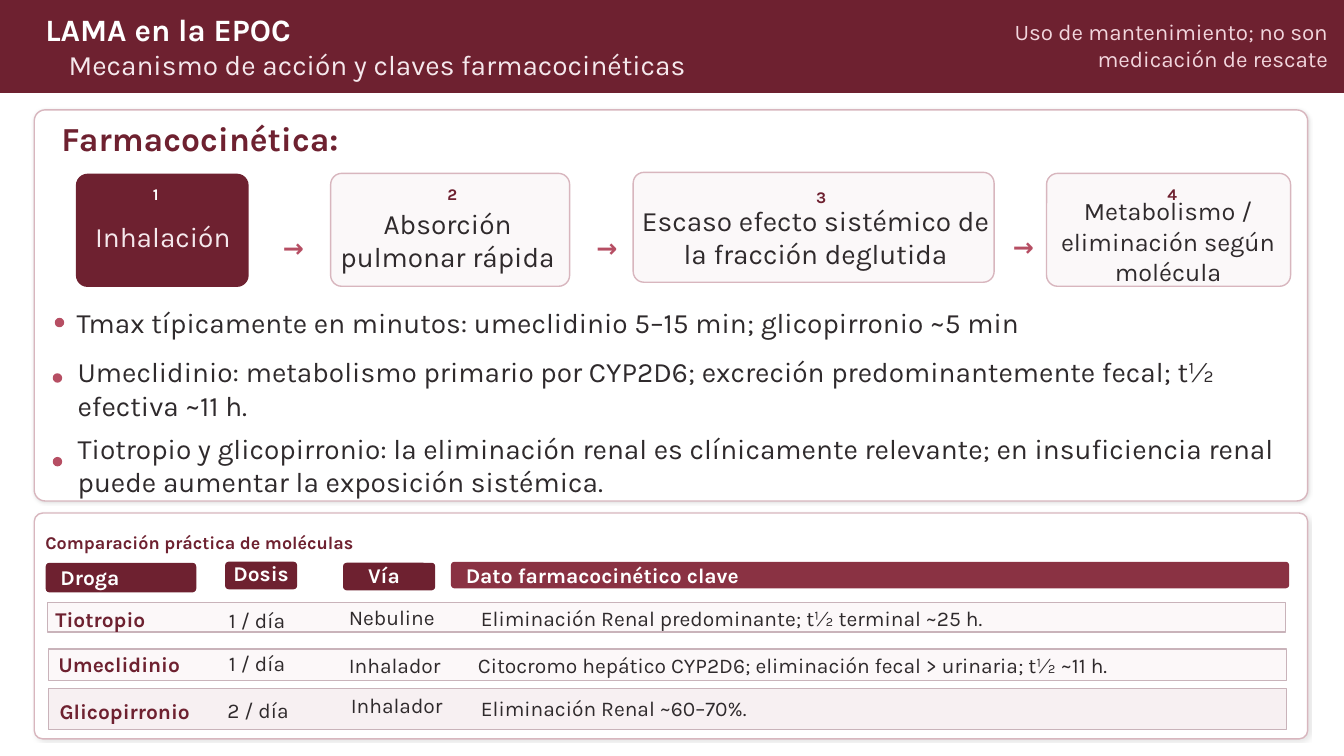
from dataclasses import dataclass
from typing import NamedTuple

from lxml.etree import SubElement
from pptx import Presentation
from pptx.dml.color import RGBColor
from pptx.enum.shapes import MSO_SHAPE
from pptx.enum.text import MSO_ANCHOR, PP_ALIGN
from pptx.oxml.ns import qn
from pptx.util import Inches, Pt

COLUMNS, ROWS = 133.3, 75
SLIDE_W, SLIDE_H = Inches(13.33), Inches(7.5)


@dataclass(frozen=True)
class Theme:
    font: str = "Karla"
    wine: str = "6E2130"
    wine_light: str = "8A3243"
    accent: str = "B64E63"
    border: str = "D8B6BE"
    row_border: str = "C9B3BA"
    white: str = "FFFFFF"
    pale: str = "F5E8EC"
    note: str = "F2D6DD"
    step: str = "FBF8F9"
    row: str = "FCF8F9"
    row_alt: str = "F7F0F2"
    ink: str = "2F2A2C"
    title: float = 22.2
    heading: float = 24
    body: float = 20
    compact: float = 18
    aside: float = 16
    cell: float = 15
    caption: float = 12.8
    number: float = 11.6


class Box(NamedTuple):
    x: float
    y: float
    w: float
    h: float


class Step(NamedTuple):
    card: Box
    number: Box
    label: Box
    lines: list[str]
    size: float
    fill: str
    border: str
    number_color: str
    label_color: str


class Bullet(NamedTuple):
    dot_x: float
    dot_y: float
    area: Box
    text: str


class Header(NamedTuple):
    bar: Box
    area: Box
    text: str
    fill: str
    align: PP_ALIGN


class Molecule(NamedTuple):
    bar: Box
    fill: str
    texts: list[str]
    areas: list[Box]


T = Theme()
LEFT, CENTER, RIGHT = PP_ALIGN.LEFT, PP_ALIGN.CENTER, PP_ALIGN.RIGHT


def place(box: Box) -> tuple[int, int, int, int]:
    col, row = SLIDE_W / COLUMNS, SLIDE_H / ROWS
    return round(box.x * col), round(box.y * row), round(box.w * col), round(box.h * row)


def add_block(s, box: Box, fill: str, line: str, kind=MSO_SHAPE.RECTANGLE, radius: float = 0):
    sp = s.shapes.add_shape(kind, *place(box))
    sp.fill.solid()
    sp.fill.fore_color.rgb = RGBColor.from_string(fill)
    sp.line.color.rgb = RGBColor.from_string(line)
    sp.line.width = Pt(1)
    sp.shadow.inherit = False
    if radius:
        sp.adjustments[0] = radius
    return sp


def add_round(s, box: Box, fill: str, line: str, radius: float):
    return add_block(s, box, fill, line, MSO_SHAPE.ROUNDED_RECTANGLE, radius)


def add_panel(s, box: Box, radius: float, blur: float, opacity: int) -> None:
    sp = add_round(s, box, T.white, T.border, radius)
    effects = sp._element.spPr.find(qn("a:effectLst"))
    shadow = SubElement(effects, qn("a:outerShdw"), blurRad=str(Pt(blur)),
                        dist=str(Pt(1)), dir=str(45 * 60000), rotWithShape="0")
    color = SubElement(shadow, qn("a:srgbClr"), val="000000")
    SubElement(color, qn("a:alpha"), val=str(opacity * 1000))


def add_text(s, box: Box, lines: list[str], size: float, color: str,
             bold: bool = False, align: PP_ALIGN = LEFT) -> None:
    tf = s.shapes.add_textbox(*place(box)).text_frame
    tf.word_wrap = True
    tf.vertical_anchor = MSO_ANCHOR.MIDDLE
    tf.margin_left = tf.margin_right = tf.margin_top = tf.margin_bottom = 0
    tf.text = "\n".join(lines)
    for p in tf.paragraphs:
        p.alignment = align
        p.font.name = T.font
        p.font.size = Pt(size)
        p.font.bold = bold
        p.font.color.rgb = RGBColor.from_string(color)


def add_step(s, step: Step) -> None:
    add_round(s, step.card, step.fill, step.border, 0.098)
    add_text(s, step.number, [str(STEPS.index(step) + 1)], T.number, step.number_color, True, CENTER)
    add_text(s, step.label, step.lines, step.size, step.label_color, align=CENTER)


def add_bullet(s, bullet: Bullet) -> None:
    add_block(s, Box(bullet.dot_x, bullet.dot_y, 0.8, 0.8), T.accent, T.accent, MSO_SHAPE.OVAL)
    add_text(s, bullet.area, [bullet.text], T.body, T.ink)


def add_header(s, header: Header) -> None:
    add_round(s, header.bar, header.fill, header.fill, 0.115)
    add_text(s, header.area, [header.text], T.cell, T.white, True, header.align)


def add_molecule(s, molecule: Molecule) -> None:
    add_block(s, molecule.bar, molecule.fill, T.row_border)
    styles = [(T.wine, True, LEFT), (T.ink, False, CENTER), (T.ink, False, LEFT), (T.ink, False, LEFT)]
    for text, area, style in zip(molecule.texts, molecule.areas, styles):
        add_text(s, area, [text], T.cell, *style)


STEPS = [
    Step(Box(7.6, 17.3, 17, 11.1), Box(9.7, 18.4, 11.5, 1.7), Box(7.7, 20.5, 16.9, 5.9),
         ["Inhalación"], T.body, T.wine, T.wine, T.white, T.pale),
    Step(Box(32.8, 17.2, 23.7, 11.2), Box(39.1, 18.4, 11.5, 1.7), Box(33.5, 21.7, 21.8, 4.2),
         ["Absorción", "pulmonar rápida"], T.body, T.step, T.border, T.wine, T.ink),
    Step(Box(62.8, 17.1, 35.8, 10.9), Box(75.7, 18.7, 11.5, 1.7), Box(62.7, 21.4, 36.4, 4.2),
         ["Escaso efecto sistémico de la fracción deglutida"], T.body, T.step, T.border, T.wine, T.ink),
    Step(Box(103.8, 17.2, 24.2, 11.2), Box(110.5, 18.4, 11.5, 1.7), Box(103.8, 21.8, 24.1, 4.2),
         ["Metabolismo /", "eliminación según molécula"], T.compact, T.step, T.border, T.wine, T.ink),
]
ARROWS = [Box(27.1, 23.5, 4, 2), Box(58.2, 23.5, 4, 2), Box(99.5, 23.4, 4, 2)]
BULLETS = [
    Bullet(5.5, 31.6, Box(7.6, 30.4, 120.3, 3.1),
           "Tmax típicamente en minutos: umeclidinio 5–15 min; glicopirronio ~5 min"),
    Bullet(5.3, 37.1, Box(7.7, 34.5, 121.7, 8),
           "Umeclidinio: metabolismo primario por CYP2D6; excreción predominantemente fecal; "
           "t½ efectiva ~11 h."),
    Bullet(5.3, 45.4, Box(7.7, 43, 121.2, 6.2),
           "Tiotropio y glicopirronio: la eliminación renal es clínicamente relevante; "
           "en insuficiencia renal puede aumentar la exposición sistémica."),
]
HEADERS = [
    Header(Box(4.6, 55.9, 14.8, 2.8), Box(6, 56.4, 14, 1.8), "Droga", T.wine, LEFT),
    Header(Box(22.4, 55.8, 7, 2.6), Box(22.8, 56, 6.2, 1.8), "Dosis", T.wine, CENTER),
    Header(Box(34.1, 55.9, 9, 2.6), Box(36.5, 56.2, 8.2, 1.8), "Vía", T.wine, LEFT),
    Header(Box(44.8, 55.8, 83, 2.5), Box(46.2, 56.2, 88.8, 1.8),
           "Dato farmacocinético clave", T.wine_light, LEFT),
]
MOLECULES = [
    Molecule(Box(4.7, 59.8, 122.8, 2.9), T.row,
             ["Tiotropio", "1 / día", "Nebuline", "Eliminación Renal predominante; t½ terminal ~25 h."],
             [Box(5.5, 60.9, 14.2, 1.1), Box(22, 61, 7, 1.1),
              Box(34.6, 60.7, 10.9, 1.1), Box(47.7, 60.5, 78.9, 1.6)]),
    Molecule(Box(4.8, 64.4, 122.8, 3.1), T.row,
             ["Umeclidinio", "1 / día", "Inhalador",
              "Citocromo hepático CYP2D6; eliminación fecal > urinaria; t½ ~11 h."],
             [Box(5.8, 65.3, 14.2, 1.1), Box(22, 65.2, 7, 1.1),
              Box(34.6, 65.2, 10.7, 1.6), Box(47.4, 64.2, 79.5, 3.5)]),
    Molecule(Box(4.8, 68.3, 122.8, 4.1), T.row_alt,
             ["Glicopirronio", "2 / día", "Inhalador", "Eliminación Renal ~60–70%."],
             [Box(5.9, 70, 14.2, 1.1), Box(22.1, 69.7, 7, 1.4),
              Box(34.8, 69.2, 10.7, 1.6), Box(47.7, 68.3, 79.9, 4)]),
]


def main() -> None:
    prs = Presentation()
    prs.slide_width, prs.slide_height = SLIDE_W, SLIDE_H
    s = prs.slides.add_slide(prs.slide_layouts[6])

    add_block(s, Box(0, 0, COLUMNS, 9.2), T.wine, T.wine)
    add_text(s, Box(4.5, 1.2, 88, 3.4), ["LAMA en la EPOC"], T.title, T.white, True)
    add_text(s, Box(6.8, 5, 63.5, 2.8), ["Mecanismo de acción y claves farmacocinéticas"], T.body, T.pale)
    add_text(s, Box(92.2, 1.2, 39.5, 6.5), ["Uso de mantenimiento; no son medicación de rescate"],
             T.aside, T.note, align=RIGHT)

    add_panel(s, Box(3.4, 10.9, 126.3, 38.8), 0.028, 2, 12)
    add_text(s, Box(6.1, 12.4, 42, 2.6), ["Farmacocinética:"], T.heading, T.wine, True)
    for step in STEPS:
        add_step(s, step)
    for arrow in ARROWS:
        add_text(s, arrow, ["→"], T.compact, T.accent, True, CENTER)
    for bullet in BULLETS:
        add_bullet(s, bullet)

    add_panel(s, Box(3.4, 50.9, 126.3, 22.4), 0.037, 1.5, 10)
    add_text(s, Box(4.5, 52.9, 52, 1.8), ["Comparación práctica de moléculas"], T.caption, T.wine, True)
    for header in HEADERS:
        add_header(s, header)
    for molecule in MOLECULES:
        add_molecule(s, molecule)

    prs.save("out.pptx")


if __name__ == "__main__":
    main()
